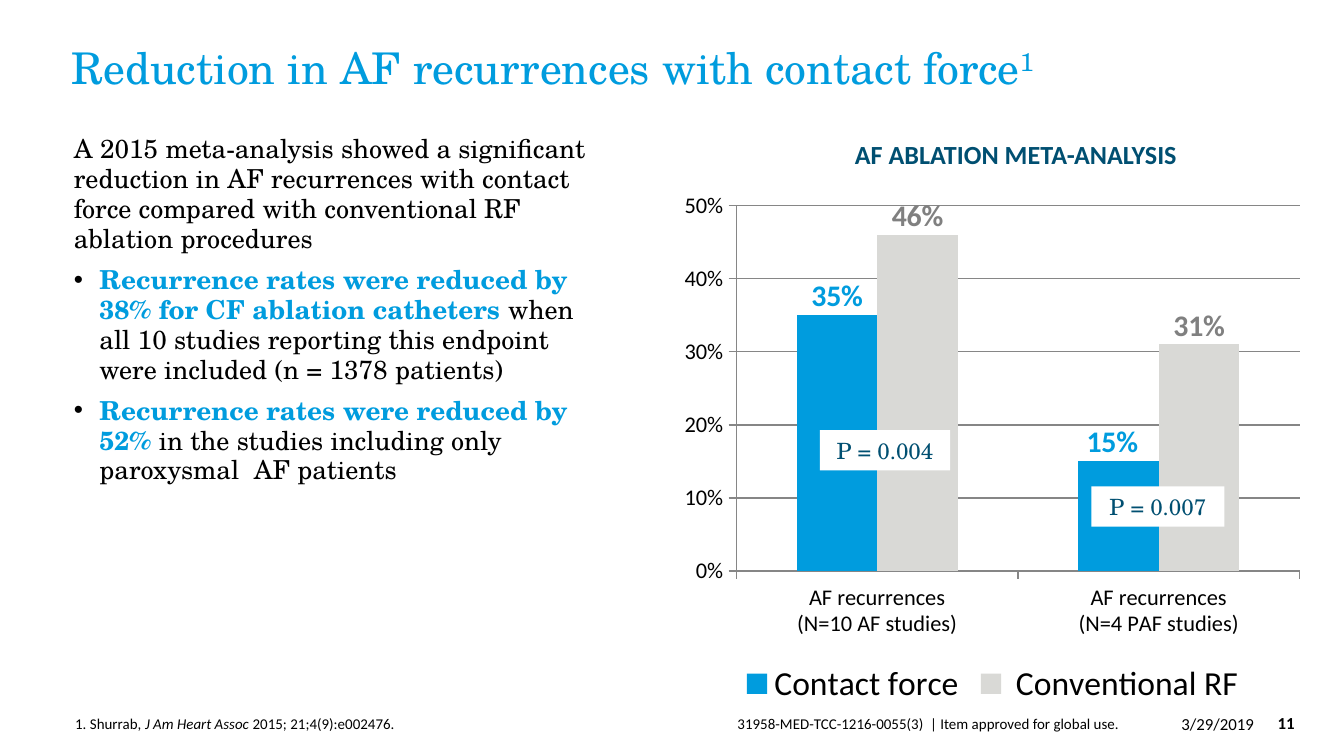
import dataclasses

import lxml.etree
import pptx
import pptx.chart.data
import pptx.dml.color
import pptx.enum.chart
import pptx.enum.shapes
import pptx.enum.text
import pptx.oxml.ns
import pptx.util

Inches = pptx.util.Inches
Pt = pptx.util.Pt
Align = pptx.enum.text.PP_ALIGN
Anchor = pptx.enum.text.MSO_ANCHOR
qn = pptx.oxml.ns.qn

COLORS = {
    "blue": "009CDE",
    "navy": "004F71",
    "black": "000000",
    "white": "FFFFFF",
    "bar_gray": "D9D9D6",
    "label_gray": "808080",
    "axis_gray": "868686",
}
SERIF = "TeX Gyre Schola"
SANS = "Calibri"
CHART_BOX = (5, 1.35, 4.77, 3.94)
PLOT_BOX = (0.48, 0.18, 4.19, 2.72)


@dataclasses.dataclass(frozen=True)
class Run:
    text: str
    size: float
    font: str = SANS
    color: str = "black"
    bold: bool = False
    italic: bool = False
    baseline: int = 0


@dataclasses.dataclass(frozen=True)
class Label:
    box: tuple[float, float, float, float]
    runs: tuple[Run, ...]
    align: Align = Align.LEFT
    anchor: Anchor = Anchor.TOP
    insets: tuple[float, float, float, float] = (0.1, 0.05, 0.1, 0.05)
    fill: str = ""


@dataclasses.dataclass(frozen=True)
class Series:
    name: str
    values: tuple[float, ...]
    fill: str
    label_color: str
    label_shifts: tuple[tuple[float, float], ...]


def rgb(name: str) -> pptx.dml.color.RGBColor:
    return pptx.dml.color.RGBColor.from_string(COLORS[name])


def set_attributes(target, values: dict) -> None:
    for name, value in values.items():
        setattr(target, name, value)


def place(shape, box: tuple[float, float, float, float]) -> None:
    set_attributes(shape, dict(zip(("left", "top", "width", "height"), map(Inches, box))))


def format_frame(text_frame, insets: tuple[float, float, float, float], anchor: Anchor) -> None:
    sides = ("margin_left", "margin_top", "margin_right", "margin_bottom")
    set_attributes(text_frame, dict(zip(sides, map(Inches, insets))))
    set_attributes(text_frame, {
        "word_wrap": True,
        "auto_size": pptx.enum.text.MSO_AUTO_SIZE.NONE,
        "vertical_anchor": anchor,
    })


def format_font(font, size: float, name: str, color: str, **styles: bool) -> None:
    set_attributes(font, {"size": Pt(size), "name": name, **styles})
    font.color.rgb = rgb(color)


def add_runs(paragraph, runs: tuple[Run, ...]) -> None:
    for item in runs:
        run = paragraph.add_run()
        run.text = item.text
        format_font(run.font, item.size, item.font, item.color, bold=item.bold, italic=item.italic)
        if item.baseline:
            run._r.get_or_add_rPr().set("baseline", str(item.baseline * 1000))


def add_label(slide, label: Label) -> None:
    box = tuple(map(Inches, label.box))
    if label.fill:
        shape = slide.shapes.add_shape(pptx.enum.shapes.MSO_SHAPE.RECTANGLE, *box)
        shape.shadow.inherit = False
        shape.fill.solid()
        shape.fill.fore_color.rgb = rgb(label.fill)
        shape.line.fill.background()
    else:
        shape = slide.shapes.add_textbox(*box)
    format_frame(shape.text_frame, label.insets, label.anchor)
    paragraph = shape.text_frame.paragraphs[0]
    paragraph.alignment = label.align
    add_runs(paragraph, label.runs)


def set_bullet(paragraph, bulleted: bool) -> None:
    properties = paragraph._p.get_or_add_pPr()
    indent = Inches(0.19) if bulleted else 0
    properties.set("marL", str(indent))
    properties.set("indent", str(-indent))
    if not bulleted:
        lxml.etree.SubElement(properties, qn("a:buNone"))
        return
    color = lxml.etree.SubElement(properties, qn("a:buClr"))
    lxml.etree.SubElement(color, qn("a:srgbClr"), val=COLORS["black"])
    lxml.etree.SubElement(properties, qn("a:buFont"), typeface="Arial")
    lxml.etree.SubElement(properties, qn("a:buChar"), char="•")


def fill_title(title, runs: tuple[Run, ...]) -> None:
    place(title, (0.43, 0.3, 9, 0.47))
    format_frame(title.text_frame, (0.1, 0.05, 0.1, 0.05), Anchor.TOP)
    paragraph = title.text_frame.paragraphs[0]
    set_attributes(paragraph, {"alignment": Align.LEFT, "line_spacing": 0.9})
    add_runs(paragraph, runs)


def fill_body(body, paragraphs: tuple[tuple[Run, ...], ...]) -> None:
    place(body, (0.55, 1, 3.94, 3.68))
    format_frame(body.text_frame, (0, 0, 0.1, 0.05), Anchor.TOP)
    for index, runs in enumerate(paragraphs):
        paragraph = body.text_frame.add_paragraph() if index else body.text_frame.paragraphs[0]
        set_attributes(paragraph, {"line_spacing": Pt(16), "space_before": Pt(6), "alignment": Align.LEFT})
        set_bullet(paragraph, index > 0)
        add_runs(paragraph, runs)


def manual_layout(values: dict):
    layout = lxml.etree.Element(qn("c:layout"))
    manual = lxml.etree.SubElement(layout, qn("c:manualLayout"))
    for name, value in values.items():
        lxml.etree.SubElement(manual, qn(f"c:{name}"), val=str(value))
    return layout


def set_plot_layout(chart) -> None:
    plot_area = chart._chartSpace.chart.plotArea
    for existing in plot_area.findall(qn("c:layout")):
        plot_area.remove(existing)
    fractions = (length / CHART_BOX[2 + index % 2] for index, length in enumerate(PLOT_BOX))
    modes = {"layoutTarget": "inner", "xMode": "edge", "yMode": "edge"}
    plot_area.insert(0, manual_layout({**modes, **dict(zip("xywh", fractions))}))


def format_series(series, item: Series, number_format: dict) -> None:
    series.format.fill.solid()
    series.format.fill.fore_color.rgb = rgb(item.fill)
    position = pptx.enum.chart.XL_LABEL_POSITION.OUTSIDE_END
    set_attributes(series.data_labels, {**number_format, "show_value": True, "position": position})
    format_font(series.data_labels.font, 16, SANS, item.label_color, bold=True)
    for index, shift in enumerate(item.label_shifts):
        data_label = series.points[index].data_label
        data_label.position = position
        format_font(data_label.font, 16, SANS, item.label_color, bold=True)
        element = series.data_labels._element.findall(qn("c:dLbl"))[index]
        element.insert(1, manual_layout(dict(zip("xy", shift))))


def add_recurrence_chart(slide, categories: tuple[str, ...], series_list: tuple[Series, ...]) -> None:
    data = pptx.chart.data.CategoryChartData(number_format="0%")
    data.categories = categories
    for item in series_list:
        data.add_series(item.name, item.values)
    kind = pptx.enum.chart.XL_CHART_TYPE.COLUMN_CLUSTERED
    chart = slide.shapes.add_chart(kind, *map(Inches, CHART_BOX), data).chart
    format_font(chart.font, 18, SERIF, "black")
    set_attributes(chart, {"has_title": False, "has_legend": True})
    set_attributes(chart.legend, {
        "position": pptx.enum.chart.XL_LEGEND_POSITION.BOTTOM,
        "include_in_layout": False,
    })
    format_font(chart.legend.font, 18, SANS, "black")
    set_plot_layout(chart)

    for axis in (chart.category_axis, chart.value_axis):
        axis.major_tick_mark = pptx.enum.chart.XL_TICK_MARK.OUTSIDE
        format_font(axis.tick_labels.font, 12, SANS, "black")
        axis.format.line.color.rgb = rgb("axis_gray")
    set_attributes(chart.value_axis, {
        "minimum_scale": 0, "maximum_scale": 0.5, "major_unit": 0.1, "has_major_gridlines": True,
    })
    chart.value_axis.major_gridlines.format.line.color.rgb = rgb("axis_gray")
    percent = {"number_format": "0%", "number_format_is_linked": False}
    set_attributes(chart.value_axis.tick_labels, percent)

    plot = chart.plots[0]
    set_attributes(plot, {"gap_width": 150, "vary_by_categories": False})
    for series, item in zip(plot.series, series_list):
        format_series(series, item, percent)


def p_value(box: tuple[float, float, float, float], text: str) -> Label:
    return Label(box, (Run(text, 12, SERIF, "navy"),), Align.CENTER, Anchor.MIDDLE, fill="white")


def body_run(text: str, highlighted: bool = False) -> Run:
    return Run(text, 14, SERIF, "blue" if highlighted else "black", highlighted)


TITLE = (
    Run("Reduction in AF recurrences with contact force", 23.4, SERIF, "blue"),
    Run("1", 23.4, SERIF, "blue", baseline=30),
)
BODY = (
    (body_run("A 2015 meta-analysis showed a significant reduction in AF recurrences with contact force "
              "compared with conventional RF ablation procedures"),),
    (body_run("Recurrence rates were reduced by 38% for CF ablation catheters ", True),
     body_run("when all 10 studies reporting this endpoint were included (n = 1378 patients)")),
    (body_run("Recurrence rates were reduced by 52% ", True),
     body_run("in the studies including only paroxysmal  AF patients")),
)
CATEGORIES = ("AF recurrences\n(N=10 AF studies)", "AF recurrences\n(N=4 PAF studies)")
SERIES = (
    Series("Contact force", (0.35, 0.15), "blue", "blue", ((0, 0.01), (-0.01, 0.01))),
    Series(" Conventional RF", (0.46, 0.31), "bar_gray", "label_gray", ((0, 0.01), (0, 0.01))),
)
NARROW = (0, 0.05, 0, 0.05)
LABELS = (
    Label((4.71, 5.27, 3.72, 0.24),
          (Run("31958-MED-TCC-1216-0055(3)  | Item approved for global use.", 8),), Align.RIGHT),
    Label((8.44, 5.21, 0.89, 0.3), (Run("3/29/2019", 9),), Align.RIGHT, Anchor.BOTTOM, NARROW),
    Label((9.41, 5.27, 0.32, 0.23), (Run("11", 9, bold=True),), Align.CENTER, Anchor.BOTTOM, NARROW),
    Label((0.56, 5.14, 4.44, 0.36),
          (Run("1. Shurrab, ", 8), Run("J Am Heart Assoc ", 8, italic=True), Run("2015; 21;4(9):e002476.", 8)),
          anchor=Anchor.BOTTOM, insets=(0, 0.05, 0.1, 0.05)),
    Label((5.51, 0.98, 4.1, 0.34),
          (Run("AF ABLATION META-ANALYSIS", 14, color="navy", bold=True),), Align.CENTER),
    p_value((6.1, 3.2, 0.97, 0.3), "P = 0.004"),
    p_value((8.12, 3.62, 0.99, 0.3), "P = 0.007"),
)


def main() -> None:
    presentation = pptx.Presentation()
    width = Inches(10)
    set_attributes(presentation, {"slide_width": width, "slide_height": width * 9 // 16})
    slide = presentation.slides.add_slide(presentation.slide_layouts[1])
    fill_title(slide.shapes.title, TITLE)
    fill_body(slide.placeholders[1], BODY)
    add_recurrence_chart(slide, CATEGORIES, SERIES)
    for label in LABELS:
        add_label(slide, label)
    presentation.save("out.pptx")


if __name__ == "__main__":
    main()
